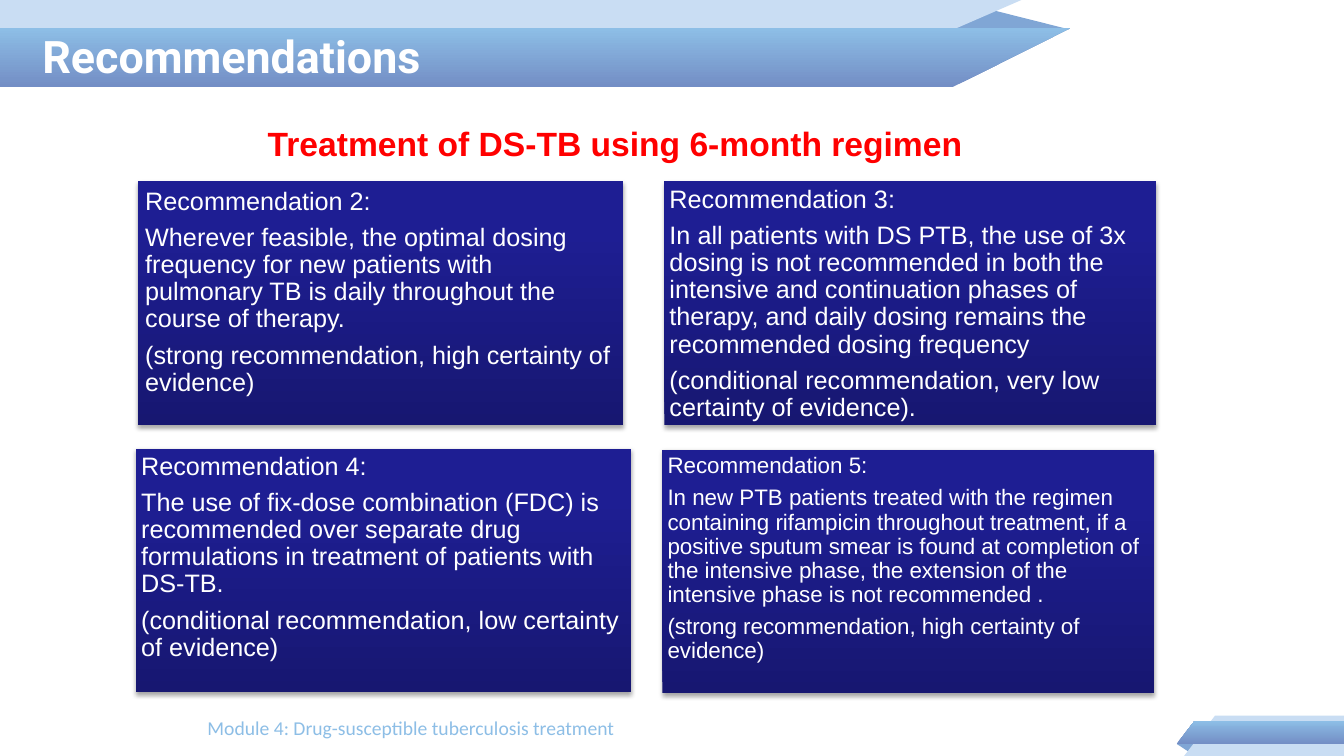
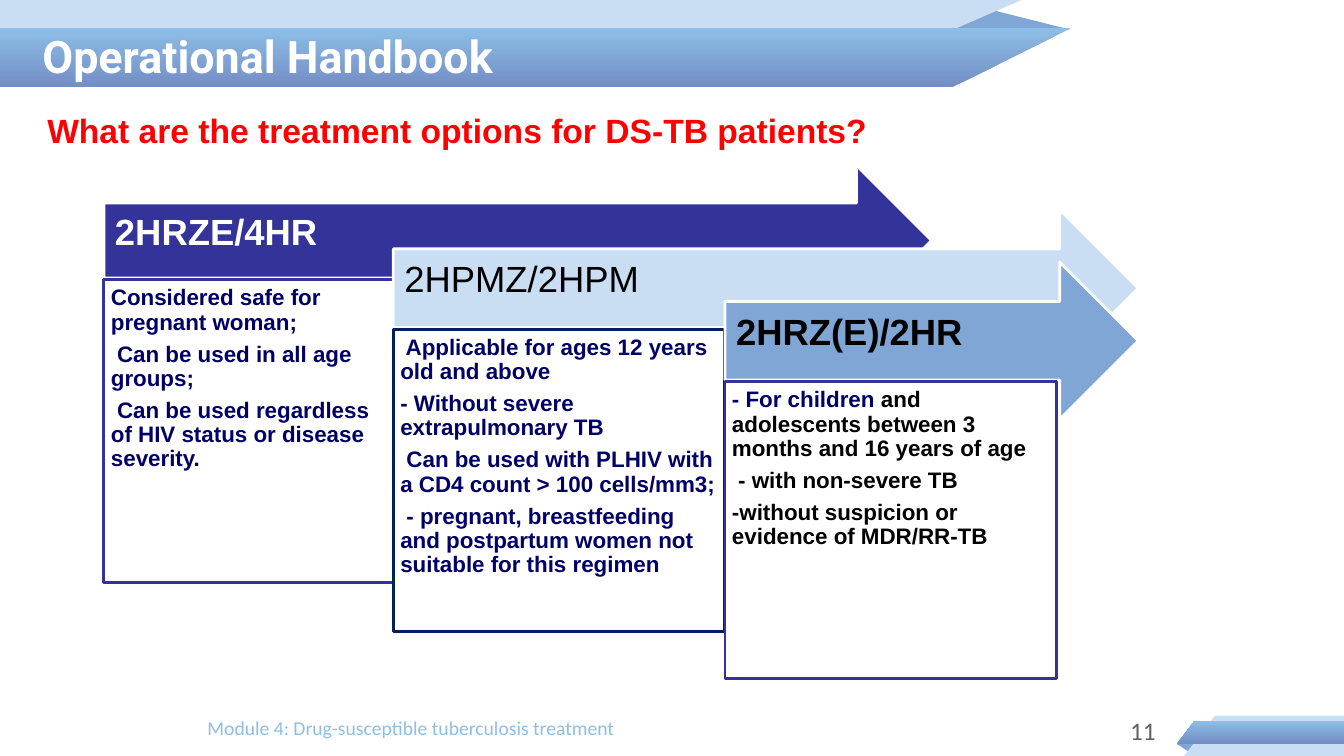
from lxml import etree
from pptx import Presentation, util as u
from pptx.dml.color import RGBColor
from pptx.enum import shapes as sh, text as tx
from pptx.oxml.ns import qn

WIDE, HIGH = u.Inches(13.33), u.Inches(7.5)
NAVY, INDIGO, DEEP = "000066", "333399", "00205C"
PALE, SKY, MID, DUSK = "C9DDF3", "8DBEE6", "80A6D5", "738EC5"
WHITE, BLACK, RED, GREY = "FFFFFF", "000000", "FF0000", "606060"
LEFT, MIDDLE, RIGHT = tx.PP_ALIGN.LEFT, tx.PP_ALIGN.CENTER, tx.PP_ALIGN.RIGHT


def hue(code):
    """Turn a hex string into a colour."""
    return RGBColor.from_string(code)


def area(x, y, w, h):
    """Turn percent shares of the slide into lengths."""
    return [round(n * side / 100) for n, side in zip((x, y, w, h), (WIDE, HIGH) * 2)]


def paint(shape, fill, line=None):
    """Fill a shape with one colour, or a (low, high, stop) gradient."""
    shape.shadow.inherit = False
    if isinstance(fill, tuple):
        low, high, stop = fill
        shape.fill.gradient()
        shape.fill.gradient_angle = 90
        for mark, code, spot in zip(shape.fill.gradient_stops, (low, high), (0, stop)):
            mark.color.rgb = hue(code)
            mark.position = spot
    else:
        shape.fill.solid()
        shape.fill.fore_color.rgb = hue(fill)
    if line:
        shape.line.color.rgb = hue(line)
        shape.line.width = u.Pt(2)
    else:
        shape.line.fill.background()
    return shape


def write(shape, *paras, size=18, color=WHITE, font="Arial", bold=False,
          align=LEFT, anchor=tx.MSO_ANCHOR.TOP, inset=None, gap=0, lead=None):
    """Write paragraphs, each a string or a list of (text, colour) runs."""
    frame = shape.text_frame
    frame.word_wrap = True
    frame.auto_size = tx.MSO_AUTO_SIZE.NONE
    frame.vertical_anchor = anchor
    if inset:
        (frame.margin_left, frame.margin_top,
         frame.margin_right, frame.margin_bottom) = map(u.Inches, inset)
    for n, para in enumerate(paras):
        line = frame.add_paragraph() if n else frame.paragraphs[0]
        line.alignment = align
        line.space_after = u.Pt(round(size * gap, 1))
        if lead:
            line.line_spacing = lead
        for words, code in [(para, color)] if isinstance(para, str) else para:
            run = line.add_run()
            run.text = words
            run.font.name, run.font.size, run.font.bold = font, u.Pt(size), bold
            run.font.color.rgb = hue(code)


def label(slide, box, words, **form):
    """Place a line of text in a box."""
    write(slide.shapes.add_textbox(*area(*box)), words, **form)


def shape(slide, kind, box, fill, line=None):
    """Place a painted preset shape."""
    return paint(slide.shapes.add_shape(kind, *area(*box)), fill, line)


def band(slide, fill, *spots):
    """Draw a slanted band through the given spots."""
    pts = [area(x, y, 0, 0)[:2] for x, y in spots]
    pen = slide.shapes.build_freeform(*pts[0])
    pen.add_line_segments(pts[1:])
    paint(pen.convert_to_shape(), fill)


def fold(slide, box, turn=0):
    """Draw the small folded corner of a ribbon."""
    flap = shape(slide, sh.MSO_SHAPE.ISOSCELES_TRIANGLE, box, MID)
    flap.adjustments[0] = 0.32
    flap.rotation = turn


def dress(slide, layout):
    """Draw both ribbons, hand them to the layout and place its title."""
    for item in list(layout.placeholders)[1:]:
        layout.shapes.element.remove(item.element)
    shade = (DUSK, SKY, 1)
    fold(slide, (70.74, 1.2, 8.78, 2.67))
    band(slide, PALE, (0, 0), (76, 0), (61.1, 11.5), (0, 11.5))
    band(slide, shade, (0, 3.73), (79.6, 3.73), (70.9, 11.5), (0, 11.5))
    fold(slide, (87.55, 98.4, 1.35, 1.07), turn=180)
    band(slide, PALE, (88.1, 100), (90.4, 94.67), (100, 94.67), (100, 100))
    band(slide, shade, (87.55, 98.4), (88.9, 95.33), (100, 95.33), (100, 98.4))
    for item in list(slide.shapes)[1:]:
        layout.shapes.element.append(item.element)
    head = layout.placeholders[0]
    head.left, head.top, head.width, head.height = area(2.4, 1.47, 60.17, 11.87)


def frame(slide, title, lead, box, align=LEFT):
    """Write the title, the red heading and the footer."""
    write(slide.shapes.title, title, size=32, font="Roboto", bold=True,
          anchor=tx.MSO_ANCHOR.MIDDLE)
    label(slide, box, lead, size=24, color=RED, bold=True, align=align)
    label(slide, (14.7, 94, 60.17, 5.33),
          "Module 4: Drug-susceptible tuberculosis treatment",
          size=14, color=SKY, font="Calibri")


def card(slide, x, y, w, paras, size=18, pad=0.05):
    """Draw a dark card with a soft shadow and its text."""
    box = shape(slide, sh.MSO_SHAPE.RECTANGLE, (x, y, w, 32.27), ("171771", "1E1E93", 0.8))
    glow = etree.SubElement(
        box.element.spPr.find(qn("a:effectLst")), qn("a:outerShdw"),
        blurRad=str(u.Pt(3.1)), dist=str(u.Pt(1.8)), dir="5400000", rotWithShape="0")
    tint = etree.SubElement(glow, qn("a:srgbClr"), val=BLACK)
    etree.SubElement(tint, qn("a:alpha"), val="35000")
    write(box, *paras, size=size, inset=[pad] * 4, gap=0.35, lead=0.9)


def option(slide, box, fill, name, ink, bold, wide, tall, edge, paras, color):
    """Draw an arrow with a regimen name and its panel below."""
    x, y, w, h = box
    arrow = shape(slide, sh.MSO_SHAPE.RIGHT_ARROW, box, fill, WHITE)
    write(arrow, name, size=26, color=ink, bold=bold, anchor=tx.MSO_ANCHOR.MIDDLE,
          inset=(0.11, 0.11, 0.28, 0.25), lead=0.9)
    panel = shape(slide, sh.MSO_SHAPE.RECTANGLE, (x, y + 0.76 * h, wide, tall), WHITE, edge)
    write(panel, *paras, size=16, color=color, bold=True, inset=[0.07] * 4,
          gap=0.35, lead=0.9)


def advice(slide):
    """Fill the slide of recommendations."""
    frame(slide, "Recommendations", "Treatment of DS-TB using 6-month regimen",
          (4.8, 15.6, 81.92, 6.13), MIDDLE)
    card(slide, 10.28, 24, 36.08, [
        "Recommendation 2:",
        "Wherever feasible, the optimal dosing frequency for new patients with "
        "pulmonary TB is daily throughout the course of therapy.",
        "(strong recommendation, high certainty of evidence)"], pad=0.07)
    card(slide, 49.44, 24, 36.61, [
        "Recommendation 3:",
        "In all patients with DS PTB, the use of 3x dosing is not recommended in both "
        "the intensive and continuation phases of therapy, and daily dosing remains "
        "the recommended dosing frequency",
        "(conditional recommendation, very low certainty of evidence)."])
    card(slide, 10.13, 59.33, 36.83, [
        "Recommendation 4:",
        "The use of fix-dose combination (FDC) is recommended over separate drug "
        "formulations in treatment of patients with DS-TB.",
        "(conditional recommendation, low certainty of evidence)"])
    card(slide, 49.29, 59.47, 36.61, [
        "Recommendation 5:",
        "In new PTB patients treated with the regimen containing rifampicin throughout "
        "treatment, if a positive sputum smear is found at completion of the intensive "
        "phase, the extension of the intensive phase is not recommended .",
        "(strong recommendation, high certainty of evidence)"], size=16)


def choices(slide):
    """Fill the slide of treatment options."""
    frame(slide, "Operational Handbook",
          "What are the treatment options for DS-TB patients?", (2.78, 13.87, 95.5, 6.13))
    option(slide, (7.73, 21.87, 61.59, 19.87), INDIGO, "2HRZE/4HR", WHITE, True,
           21.91, 40.13, INDIGO, [
               "Considered safe for pregnant woman;",
               " Can be used in all age groups;",
               " Can be used regardless of HIV status or disease severity."], NAVY)
    option(slide, (29.26, 27.73, 55.44, 20.8), PALE, "2HPMZ/2HPM", BLACK, False,
           24.68, 40, DEEP, [
               " Applicable for ages 12 years old and above",
               "- Without severe extrapulmonary TB",
               " Can be used with PLHIV with a CD4 count > 100 cells/mm3;",
               " - pregnant, breastfeeding and postpartum women not suitable "
               "for this regimen"], NAVY)
    option(slide, (53.94, 34.67, 30.76, 20.8), MID, "2HRZ(E)/2HR", BLACK, True,
           24.68, 39.33, INDIGO, [
               [("- For children ", NAVY),
                ("and adolescents between 3 months and 16 years of age", BLACK)],
               " - with non-severe TB",
               "-without suspicion or evidence of MDR/RR-TB"], BLACK)
    label(slide, (76, 94, 10.73, 5.33), "11", color=GREY, font="Calibri", align=RIGHT)


def main():
    """Build and save the deck."""
    deck = Presentation()
    deck.slide_width, deck.slide_height = WIDE, HIGH
    layout = deck.slide_layouts[5]
    first, second = [deck.slides.add_slide(layout) for _ in range(2)]
    dress(first, layout)
    advice(first)
    choices(second)
    deck.save("out.pptx")


if __name__ == "__main__":
    main()
